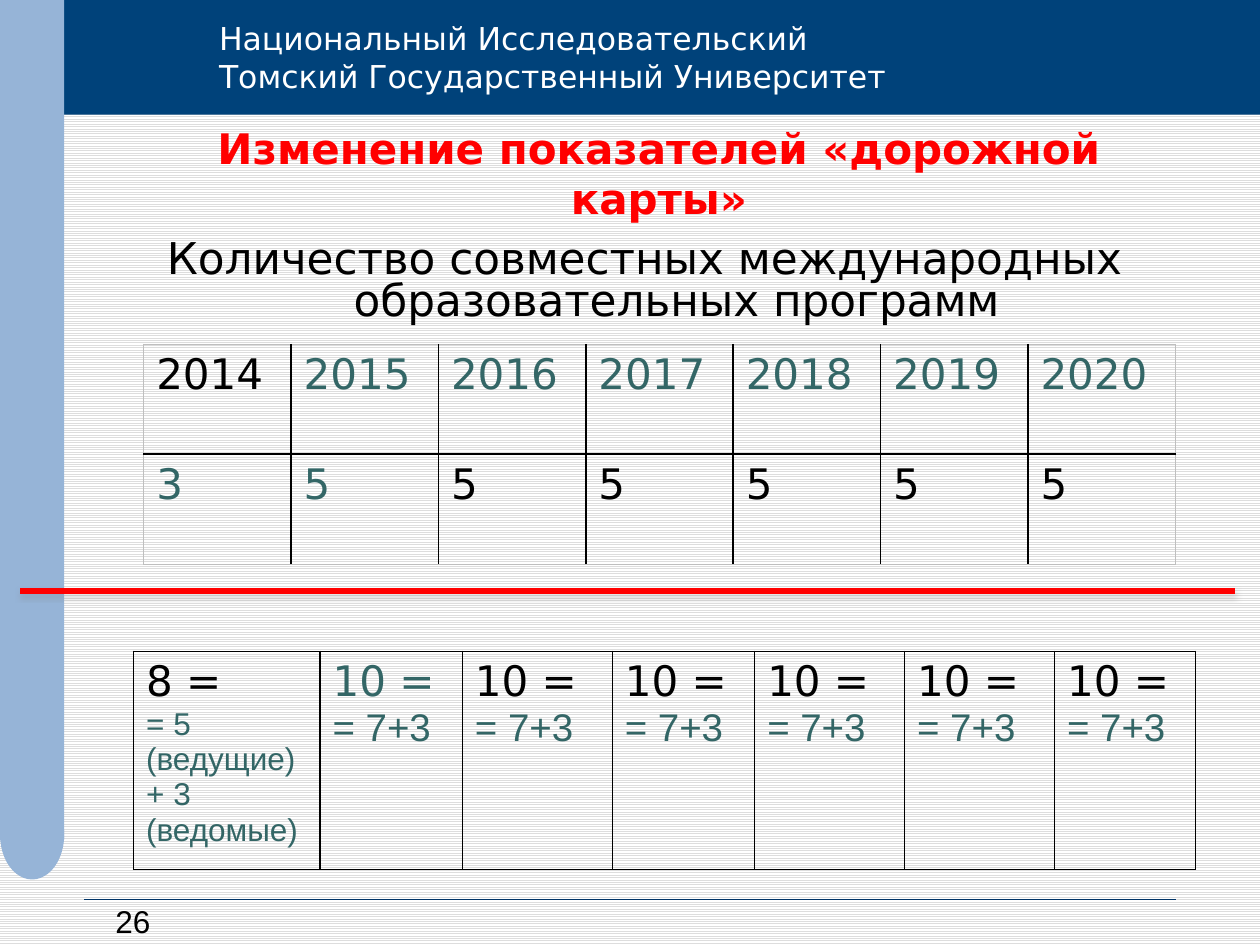
from collections import namedtuple

from lxml import etree
from pptx import Presentation
from pptx import util as u
from pptx.dml.color import RGBColor
from pptx.enum import dml, shapes, text
from pptx.oxml import ns

NAVY = RGBColor(0x00, 0x42, 0x7A)
RULE = RGBColor(0x00, 0x33, 0x66)
SKY = RGBColor(0x96, 0xB4, 0xD7)
TEAL = RGBColor(0x33, 0x66, 0x66)
RED = RGBColor(0xFF, 0x00, 0x00)
BLACK = RGBColor(0x00, 0x00, 0x00)
WHITE = RGBColor(0xFF, 0xFF, 0xFF)
GREY = RGBColor(0x80, 0x80, 0x80)
SILVER = RGBColor(0xBF, 0xBF, 0xBF)
STRIPE = RGBColor(0xDD, 0xDD, 0xDD)
SANS, ARIAL = "DejaVu Sans", "Arial"

# The slide is a grid of 100 columns by 75 rows.
COLS, ROWS = 100, 75
UNIT = u.Inches(0.1)
Box = namedtuple("Box", "x y w h")


def grid(*values):
    return [round(v * UNIT) for v in values]


def sub(parent, tag, **attrs):
    return etree.SubElement(parent, ns.qn(tag), attrs)


def write(p, words, size=24, font=SANS, color=BLACK, bold=False, align=None):
    r = p.add_run()
    r.text = words
    r.font.size, r.font.name, r.font.bold = u.Pt(size), font, bold
    r.font.color.rgb = color
    p.alignment = align


def add_text(s, box, lines, **fmt):
    tf = s.shapes.add_textbox(*grid(*box)).text_frame
    tf.word_wrap = True
    for i, line in enumerate(lines):
        write(tf.add_paragraph() if i else tf.paragraphs[0], line, **fmt)
    return tf


def add_shape(s, kind, box, color=None):
    sp = s.shapes.add_shape(kind, *grid(*box))
    sp.shadow.inherit = False
    sp.line.fill.background()
    if color is None:
        sp.fill.background()
    else:
        sp.fill.solid()
        sp.fill.fore_color.rgb = color
    return sp


def add_rule(s, x1, x2, y, color, width):
    """Draw a level line and return its empty effect list."""
    line = s.shapes.add_connector(shapes.MSO_CONNECTOR.STRAIGHT, *grid(x1, y, x2, y))
    line.line.color.rgb, line.line.width = color, u.Pt(width)
    return sub(line._element.spPr, "a:effectLst")


def add_header(s, box):
    add_shape(s, shapes.MSO_SHAPE.RECTANGLE, box, NAVY)
    add_text(s, Box(box.x + 16.4, box.y + 1, 59.1, 7.1),
             ["Национальный Исследовательский", "Томский Государственный Университет"],
             size=18, color=WHITE)


def add_side_bar(s, box):
    cap = 7.1
    add_shape(s, shapes.MSO_SHAPE.OVAL, Box(box.x, box.y + box.h - cap, box.w, cap), SKY)
    add_shape(s, shapes.MSO_SHAPE.RECTANGLE, box._replace(h=box.h - 3.2), SKY)


def add_divider(s, x1, x2, y):
    effects = add_rule(s, x1, x2, y, RED, 3)
    shadow = sub(effects, "a:outerShdw", blurRad=str(u.Pt(3.1)), dist=str(u.Pt(1.8)),
                 dir="5400000", rotWithShape="0")
    sub(sub(shadow, "a:srgbClr", val=str(GREY)), "a:alpha", val="35000")


def add_page_number(s, box, number):
    tf = add_shape(s, shapes.MSO_SHAPE.OVAL, box).text_frame
    tf.vertical_anchor = text.MSO_ANCHOR.TOP
    write(tf.paragraphs[0], number, size=18, font=ARIAL, align=text.PP_ALIGN.LEFT)


def set_title(s, box, words):
    sp = s.shapes.title
    sp.left, sp.top, sp.width, sp.height = grid(*box)
    tf = sp.text_frame
    tf.auto_size, tf.vertical_anchor = text.MSO_AUTO_SIZE.NONE, text.MSO_ANCHOR.TOP
    write(tf.paragraphs[0], words, color=RED, bold=True, align=text.PP_ALIGN.CENTER)


def add_subtitle(s, box, words):
    p = add_text(s, box, [words], size=25, align=text.PP_ALIGN.CENTER).paragraphs[0]
    p.line_spacing = 0.8
    hang = u.Inches(0.51)
    p._p.get_or_add_pPr().set("marL", str(hang))
    p._p.get_or_add_pPr().set("indent", str(-hang))


def set_border(cell, side, color, width):
    ln = sub(cell._tc.get_or_add_tcPr(), "a:ln" + side, w=str(u.Pt(width)))
    sub(sub(ln, "a:solidFill"), "a:srgbClr", val=str(color))


def add_table(s, box, widths, rows, framed=True):
    """Fill a table from rows of cells; a cell is a list of (words, format)."""
    tb = s.shapes.add_table(len(rows), len(widths), *grid(*box)).table
    tb.first_row = tb.horz_banding = False
    for column, width in zip(tb.columns, widths):
        column.width, = grid(width)
    last_row, last_col = len(rows) - 1, len(widths) - 1
    for i, row in enumerate(rows):
        for j, lines in enumerate(row):
            cell = tb.cell(i, j)
            outer = {"L": j == 0, "R": j == last_col, "T": i == 0, "B": i == last_row}
            for side, at_edge in outer.items():
                faint = at_edge and not framed
                set_border(cell, side, SILVER if faint else BLACK, 0.25 if faint else 1)
            cell.fill.background()
            tf = cell.text_frame
            for k, (words, fmt) in enumerate(lines):
                write(tf.add_paragraph() if k else tf.paragraphs[0], words, **fmt)


def add_year_table(s, box):
    years = [[(str(y), {"color": BLACK if y == 2014 else TEAL})] for y in range(2014, 2021)]
    counts = [[(n, {"color": TEAL if j < 2 else BLACK})] for j, n in enumerate("3555555")]
    add_table(s, box, [box.w / len(years)] * len(years), [years, counts], framed=False)


def add_total_table(s, box):
    first = [("8 =", {}),
             ("= 5 (ведущие) + 3 (ведомые)", {"size": 18, "font": ARIAL, "color": TEAL})]
    rest = [[("10 =", {"color": TEAL if j == 0 else BLACK}),
             ("= 7+3", {"size": 22, "font": ARIAL, "color": TEAL})] for j in range(6)]
    widths = [14.8, 11.3, 11.9, 11.3, 11.9, 11.9, 11.2]
    add_table(s, box, widths, [[first] + rest])


def set_background(s):
    fill = s.background.fill
    fill.patterned()
    fill.pattern = dml.MSO_PATTERN.LIGHT_HORIZONTAL
    fill.fore_color.rgb, fill.back_color.rgb = STRIPE, WHITE


def main():
    prs = Presentation()
    prs.slide_width, prs.slide_height = grid(COLS, ROWS)
    s = prs.slides.add_slide(prs.slide_layouts[5])
    set_background(s)
    add_rule(s, 6.7, 93.3, 71.4, RULE, 0.25)
    add_header(s, Box(0, 0, COLS, 9.1))
    add_side_bar(s, Box(0, 0, 5.1, 69.8))
    add_page_number(s, Box(6.1, 70.4, 14.2, 4.6), "26")
    set_title(s, Box(9.8, 9.2, 85, 7.9), "Изменение показателей «дорожной карты»")
    add_subtitle(s, Box(4.3, 18.6, 93.7, 8.5),
                 "Количество совместных международных образовательных программ")
    add_year_table(s, Box(11.4, 27.3, 81.9, 17.5))
    add_divider(s, 1.6, 98, 46.9)
    add_total_table(s, Box(10.6, 51.7, 84.3, 17.3))
    prs.save("out.pptx")


if __name__ == "__main__":
    main()
